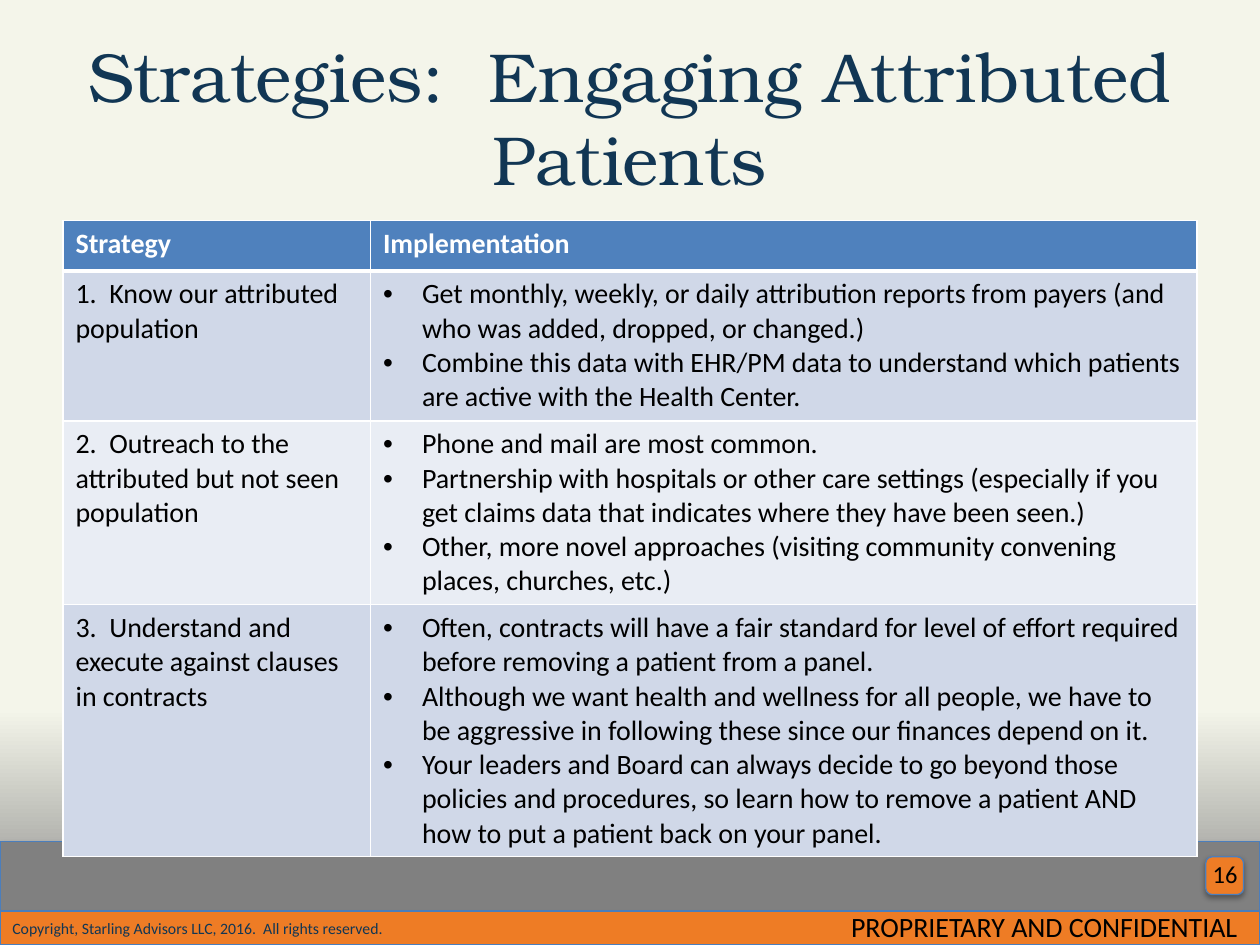
from lxml import etree
from pptx import Presentation, util as u
from pptx.dml.color import RGBColor
from pptx.enum import shapes, text
from pptx.oxml import parse_xml
from pptx.oxml.ns import nsdecls, qn

CREAM = RGBColor(0xF4, 0xF5, 0xEA)
GRAY = RGBColor(0x80, 0x80, 0x80)
ORANGE = RGBColor(0xEE, 0x7C, 0x25)
OUTLINE = RGBColor(0x4B, 0x7E, 0xBC)
NAVY = RGBColor(0x11, 0x36, 0x54)
BLACK = RGBColor(0, 0, 0)
WHITE = RGBColor(0xFF, 0xFF, 0xFF)
HEADER = RGBColor(0x4F, 0x81, 0xBD)
BANDS = RGBColor(0xD0, 0xD8, 0xE8), RGBColor(0xE9, 0xED, 0xF4)

LEFT, CENTER, RIGHT = text.PP_ALIGN.LEFT, text.PP_ALIGN.CENTER, text.PP_ALIGN.RIGHT
MIDDLE = text.MSO_ANCHOR.MIDDLE
RECT, ROUND = shapes.MSO_SHAPE.RECTANGLE, shapes.MSO_SHAPE.ROUNDED_RECTANGLE

STRATEGIES = [
    ("1.  Know our attributed population", [
        "Get monthly, weekly, or daily attribution reports from payers (and who was added, "
        "dropped, or changed.)",
        "Combine this data with EHR/PM data to understand which patients are active with "
        "the Health Center."]),
    ("2.  Outreach to the attributed but not seen population", [
        "Phone and mail are most common.",
        "Partnership with hospitals or other care settings (especially if you get claims "
        "data that indicates where they have been seen.)",
        "Other, more novel approaches (visiting community convening places, churches, etc.)"]),
    ("3.  Understand and execute against clauses in contracts", [
        "Often, contracts will have a fair standard for level of effort required before "
        "removing a patient from a panel.",
        "Although we want health and wellness for all people, we have to be aggressive in "
        "following these since our finances depend on it.",
        "Your leaders and Board can always decide to go beyond those policies and procedures, "
        "so learn how to remove a patient AND how to put a patient back on your panel."]),
]


class Deck:
    """Style and current slide; lengths are units of a 100 by 75 grid."""
    title_font, body_font = "TeX Gyre Bonum", "Calibri"

    def __init__(self):
        self.prs = Presentation()
        self.prs.slide_width, self.prs.slide_height = u.Inches(10), u.Inches(7.5)
        self.unit = self.prs.slide_width / 100
        self.s = self.prs.slides.add_slide(self.prs.slide_layouts[6])

    def grid(self, *lengths):
        return [round(n * self.unit) for n in lengths]

    def background(self, top, bottom, start):
        fill = self.s.background.fill
        fill.gradient()
        fill.gradient_angle = 270
        for stop, color, position in zip(fill.gradient_stops, (top, bottom), (start, 1)):
            stop.color.rgb, stop.position = color, position

    def set_text(self, tf, lines, size, color, align=LEFT, font=None, bold=False, bullets=False):
        tf.word_wrap = True
        tf.text = "\n".join(lines)
        for p in tf.paragraphs:
            p.alignment = align
            if bullets:
                self.bullet(p)
            for r in p.runs:
                r.font.name, r.font.size = font or self.body_font, u.Pt(size)
                r.font.bold, r.font.color.rgb = bold, color

    def bullet(self, p):
        indent = self.grid(3.1)[0]
        pPr = p._p.get_or_add_pPr()
        pPr.set("marL", str(indent))
        pPr.set("indent", str(-indent))
        etree.SubElement(pPr, qn("a:buFont")).set("typeface", "Arial")
        etree.SubElement(pPr, qn("a:buChar")).set("char", "•")

    def panel(self, kind, box, fill):
        sp = self.s.shapes.add_shape(kind, *self.grid(*box))
        sp.fill.solid()
        sp.fill.fore_color.rgb = fill
        sp.line.color.rgb, sp.line.width = OUTLINE, u.Pt(0.75)
        sp.shadow.inherit = False
        sp._element.spPr.find(qn("a:effectLst")).append(parse_xml(
            f'<a:outerShdw {nsdecls("a")} blurRad="{u.Pt(3.1)}" dist="{u.Pt(1.8)}" '
            'dir="5400000" rotWithShape="0"><a:srgbClr val="000000">'
            '<a:alpha val="35000"/></a:srgbClr></a:outerShdw>'))
        sp.text_frame.vertical_anchor = MIDDLE
        return sp

    def label(self, box, line, size, color, align, **style):
        tf = self.s.shapes.add_textbox(*self.grid(*box)).text_frame
        self.set_text(tf, [line], size, color, align, **style)
        return tf

    def cell(self, cell, lines, fill, color=BLACK, top=1, bottom=1, **style):
        self.set_text(cell.text_frame, lines, 16, color, **style)
        cell.fill.solid()
        cell.fill.fore_color.rgb = fill
        tcPr = cell._tc.get_or_add_tcPr()
        for i, (side, width) in enumerate(zip("LRTB", (1, 1, top, bottom))):
            tcPr.insert(i, parse_xml(
                f'<a:ln{side} {nsdecls("a")} w="{u.Pt(width)}"><a:solidFill>'
                f'<a:srgbClr val="{WHITE}"/></a:solidFill></a:ln{side}>'))

    def table(self, left, top, widths, heights, header, rows):
        box = self.grid(left, top, sum(widths), sum(heights))
        table = self.s.shapes.add_table(len(heights), len(widths), *box).table
        for column, width in zip(table.columns, self.grid(*widths)):
            column.width = width
        for row, height in zip(table.rows, self.grid(*heights)):
            row.height = height
        for c, heading in enumerate(header):
            self.cell(table.cell(0, c), [heading], HEADER, WHITE, bottom=3, bold=True)
        for i, (strategy, steps) in enumerate(rows):
            band, edge = BANDS[i % 2], 1 if i else 3
            self.cell(table.cell(i + 1, 0), [strategy], band, top=edge)
            self.cell(table.cell(i + 1, 1), steps, band, top=edge, bullets=True)


def main():
    deck = Deck()
    deck.background(CREAM, GRAY, 0.75)
    deck.panel(RECT, (0, 66.8, 100, 8.2), GRAY)
    footer = deck.panel(RECT, (0, 72.3, 100, 2.7), ORANGE)
    deck.set_text(footer.text_frame,
                  ["Copyright, Starling Advisors LLC, 2016.  All rights reserved."], 9, NAVY)
    deck.panel(ROUND, (95.7, 68, 3, 3), ORANGE)
    deck.label((94, 67.7, 5.2, 4), "16", 14, BLACK, RIGHT)
    notice = deck.label((54.4, 71.7, 44.8, 3.7), "PROPRIETARY AND CONFIDENTIAL", 16, BLACK, RIGHT)
    notice.auto_size = text.MSO_AUTO_SIZE.SHAPE_TO_FIT_TEXT
    title = deck.label((5, 3, 90, 12.5), "Strategies:  Engaging Attributed Patients",
                       39.6, NAVY, CENTER, font=deck.title_font)
    title.vertical_anchor = MIDDLE
    deck.table(5, 17.5, (24.4, 65.6), (4, 11.9, 14.6, 20),
               ("Strategy", "Implementation"), STRATEGIES)
    deck.prs.save("out.pptx")


if __name__ == "__main__":
    main()
